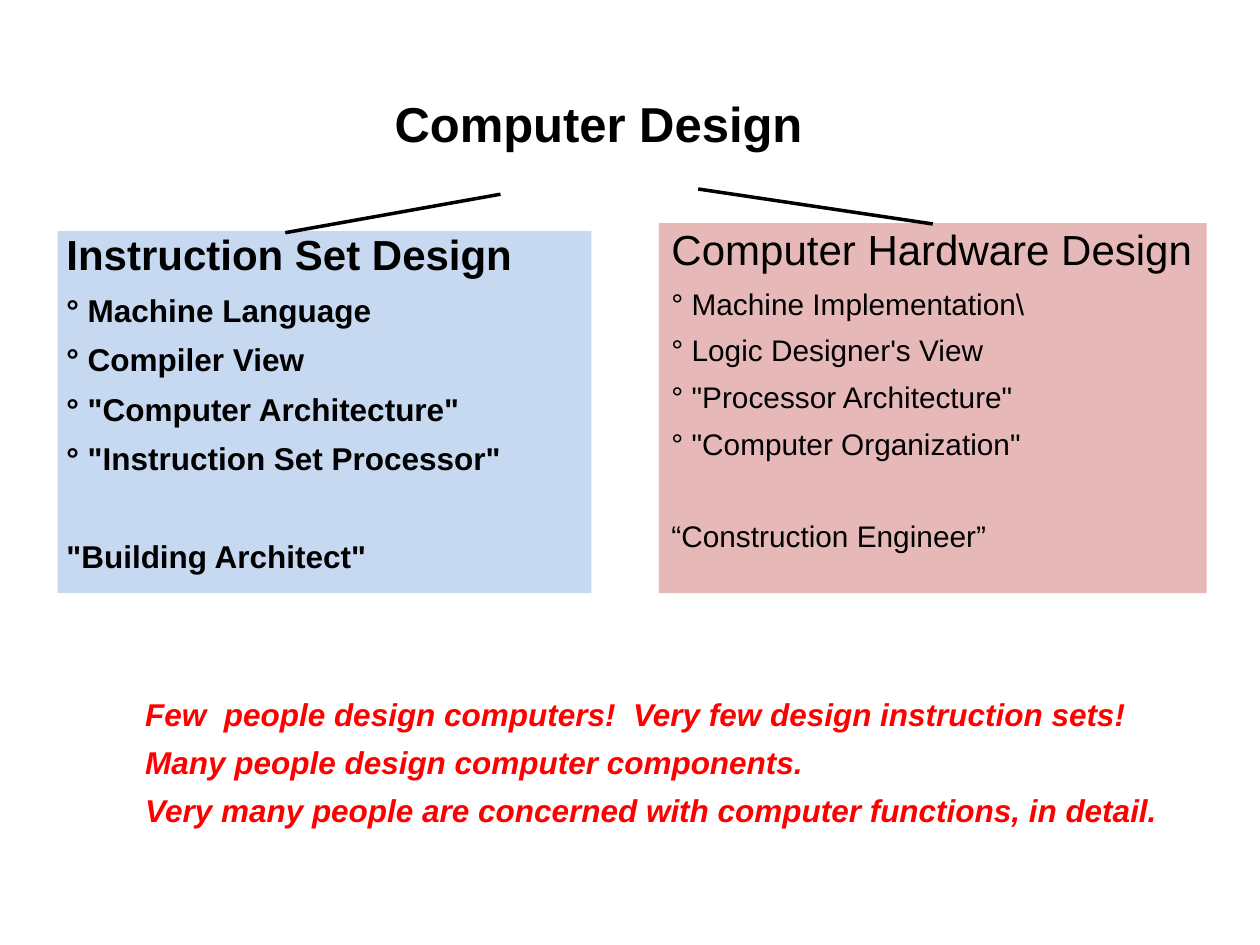
from lxml import etree
from pptx import Presentation
from pptx.dml.color import RGBColor
from pptx.enum.shapes import MSO_CONNECTOR, MSO_SHAPE
from pptx.enum.text import MSO_ANCHOR, MSO_AUTO_SIZE, PP_ALIGN
from pptx.oxml.ns import qn
from pptx.util import Pt

LINE = MSO_CONNECTOR.STRAIGHT
RECT = MSO_SHAPE.RECTANGLE
TOP = MSO_ANCHOR.TOP
FIXED = MSO_AUTO_SIZE.NONE
LEFT, CENTER = PP_ALIGN.LEFT, PP_ALIGN.CENTER
FONT = "Arial"
HANG = 27
TIGHT, ROOMY = (5, 2), (7.2, 3.6)

SOFT = [
    "Instruction Set Design",
    "° Machine Language",
    "° Compiler View",
    '° "Computer Architecture"',
    '° "Instruction Set Processor"',
    '"Building Architect"',
]
HARD = [
    "Computer Hardware Design",
    "° Machine Implementation\\",
    "° Logic Designer's View",
    '° "Processor Architecture"',
    '° "Computer Organization"',
    "“Construction Engineer”",
]
CLAIMS = [
    "Few  people design computers!  Very few design instruction sets!",
    "Many people design computer components.",
    "Very many people are concerned with computer functions, in detail.",
]


def color(code):
    """Turn a hex string into a colour."""
    return RGBColor.from_string(code)


def place(shape, left, top, width, height):
    """Move and size a shape in points."""
    shape.left, shape.top = Pt(left), Pt(top)
    shape.width, shape.height = Pt(width), Pt(height)


def fill(shape, code):
    """Give a shape a plain fill and no outline."""
    shape.fill.solid()
    shape.fill.fore_color.rgb = color(code)
    shape.line.fill.background()


def frame(shape, pads, wrap=True):
    """Set up the text frame of a shape and return it."""
    box = shape.text_frame
    box.word_wrap = wrap
    box.auto_size = FIXED
    box.vertical_anchor = TOP
    box.margin_left = box.margin_right = Pt(pads[0])
    box.margin_top = box.margin_bottom = Pt(pads[1])
    return box


def write(par, text, size, code="000000", bold=False, slant=False):
    """Add one run to a paragraph."""
    run = par.add_run()
    run.text = text
    font = run.font
    font.name, font.size = FONT, Pt(size)
    font.bold, font.italic = bold, slant
    font.color.rgb = color(code)


def hang(par, space, before):
    """Format a paragraph with a hanging indent and no bullet."""
    par.alignment = LEFT
    par.line_spacing = space
    par.space_before = Pt(before)
    props = par._p.get_or_add_pPr()
    props.set("marL", str(Pt(HANG)))
    props.set("indent", str(Pt(-HANG)))
    etree.SubElement(props, qn("a:buNone"))


def fill_text(box, lines, sizes, space, gaps, **style):
    """Write one paragraph for each line, size and gap."""
    for spot, (text, size, gap) in enumerate(zip(lines, sizes, gaps)):
        par = box.add_paragraph() if spot else box.paragraphs[0]
        hang(par, space, gap)
        write(par, text, size, **style)


def panel(shape, code, lines, size, pads, bold):
    """Fill a panel with a heading, points and a set-off last line."""
    fill(shape, code)
    gap = round(size * 0.49, 1)
    gaps = [0] + [gap] * (len(lines) - 2) + [round(size * 2.02, 1)]
    sizes = [24] + [size] * (len(lines) - 1)
    fill_text(frame(shape, pads), lines, sizes, 0.9, gaps, bold=bold)


def branch(slide, *ends):
    """Draw a black line between two points."""
    link = slide.shapes.add_connector(LINE, *map(Pt, ends))
    link.line.color.rgb = color("000000")
    link.line.width = Pt(2)
    etree.SubElement(link._element.spPr, qn("a:effectLst"))


def main():
    """Build the slide and save it."""
    deck = Presentation()
    deck.slide_width, deck.slide_height = Pt(720), Pt(540)
    slide = deck.slides.add_slide(deck.slide_layouts[1])
    shapes = slide.shapes

    title = shapes.title
    place(title, 219, 51, 246, 39)
    par = frame(title, TIGHT, wrap=False).paragraphs[0]
    par.alignment, par.line_spacing = CENTER, 1.02
    write(par, "Computer Design", 28, bold=True)

    soft = shapes.add_shape(RECT, Pt(33), Pt(132), Pt(305), Pt(207))
    soft.shadow.inherit = False
    panel(soft, "C6D9F1", SOFT, 18, TIGHT, True)

    hard = slide.placeholders[1]
    place(hard, 376.5, 127.5, 313, 211.5)
    panel(hard, "E6B9B8", HARD, 17, ROOMY, False)

    note = shapes.add_textbox(Pt(78), Pt(398), Pt(602), Pt(81))
    fill_text(frame(note, TIGHT), CLAIMS, [18] * 3, 0.88, [0, 8.4, 8.4],
              code="FF0000", bold=True, slant=True)

    branch(slide, 399, 108, 533, 128)
    branch(slide, 286, 111, 163, 133)
    deck.save("out.pptx")


if __name__ == "__main__":
    main()
